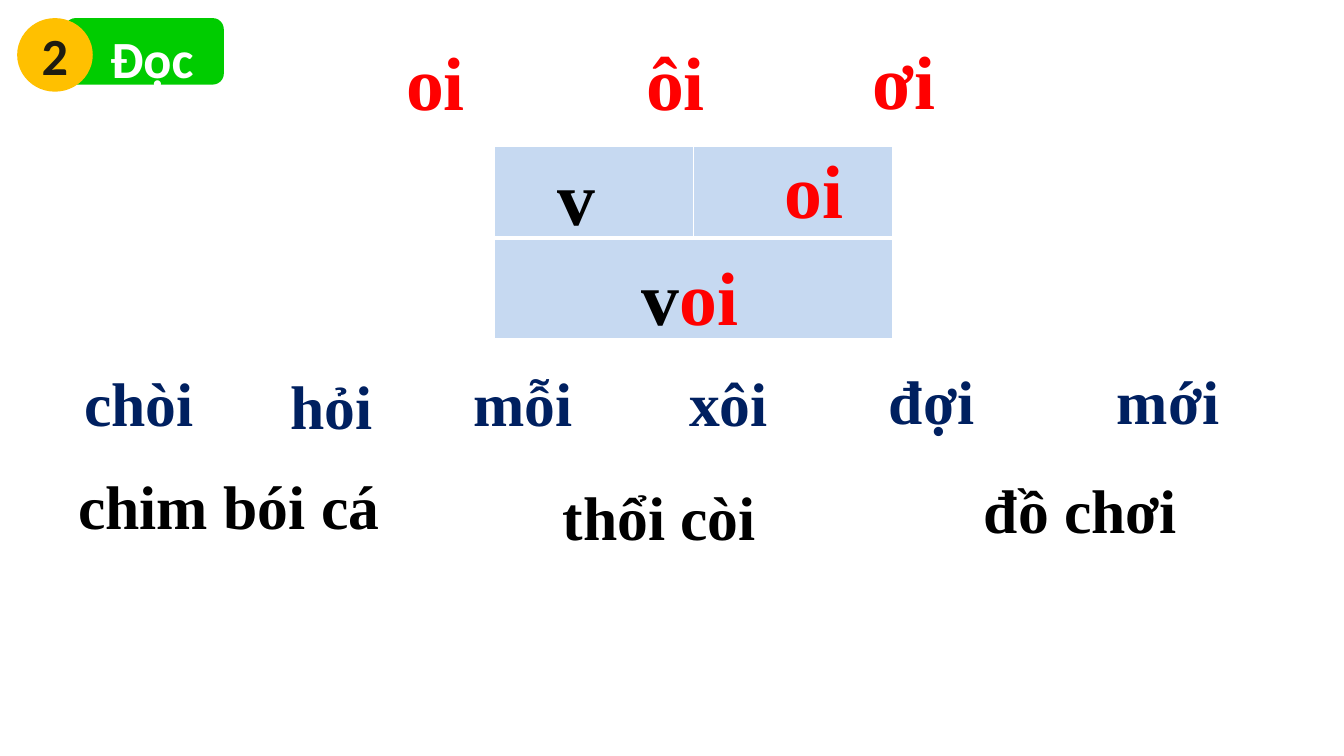
from dataclasses import dataclass

from lxml import etree
from pptx import Presentation
from pptx.dml.color import RGBColor
from pptx.enum import shapes, text
from pptx.oxml import ns
from pptx.util import Inches, Pt


@dataclass(frozen=True)
class Theme:
    serif: str = "Times New Roman"
    sans: str = "Calibri"
    black: str = "000000"
    white: str = "FFFFFF"
    red: str = "FF0000"
    navy: str = "002060"
    green: str = "00CC00"
    amber: str = "FFC000"
    dark: str = "1E1C11"
    cell: str = "C6D9F1"
    sound_size: float = 54
    word_size: float = 44
    badge_size: float = 37.3
    badge_space_size: float = 48


THEME = Theme()
CENTER, LEFT = text.PP_ALIGN.CENTER, text.PP_ALIGN.LEFT


def write_text(frame, *runs, font=THEME.serif, size=THEME.word_size,
               color=THEME.black, align=CENTER):
    """Write bold runs; each is a string or (string, overrides of the format)."""
    paragraph = frame.paragraphs[0]
    paragraph.alignment = align
    for item in runs:
        words, overrides = (item, {}) if isinstance(item, str) else item
        style = {"font": font, "size": size, "color": color} | overrides
        run = paragraph.add_run()
        run.text = words
        run.font.name = style["font"]
        run.font.size = Pt(style["size"])
        run.font.color.rgb = RGBColor.from_string(style["color"])
        run.font.bold = True


def add_label(slide, box, *runs, **style):
    label = slide.shapes.add_textbox(*map(Inches, box))
    frame = label.text_frame
    frame.word_wrap = True
    frame.auto_size = text.MSO_AUTO_SIZE.SHAPE_TO_FIT_TEXT
    write_text(frame, *runs, **style)


def add_badge_part(group, kind, box, fill, *runs, **style):
    shape = group.shapes.add_shape(kind, *map(Inches, box))
    shape.shadow.inherit = False
    shape.fill.solid()
    shape.fill.fore_color.rgb = RGBColor.from_string(fill)
    shape.line.fill.background()
    shape.text_frame.vertical_anchor = text.MSO_ANCHOR.MIDDLE
    write_text(shape.text_frame, *runs, font=THEME.sans,
               size=THEME.badge_size, **style)


def add_badge(slide):
    group = slide.shapes.add_group_shape()
    add_badge_part(group, shapes.MSO_SHAPE.ROUNDED_RECTANGLE,
                   (0.64, 0.18, 1.58, 0.66), THEME.green,
                   (" ", {"size": THEME.badge_space_size}), "Đọc",
                   color=THEME.white)
    add_badge_part(group, shapes.MSO_SHAPE.OVAL, (0.17, 0.18, 0.75, 0.73),
                   THEME.amber, "2", color=THEME.dark)


def style_cell(cell, bottom_width):
    properties = cell._tc.get_or_add_tcPr()
    for side in ("L", "R", "T", "B"):
        width = Pt(bottom_width if side == "B" else 1)
        line = etree.SubElement(properties, ns.qn(f"a:ln{side}"), w=str(width))
        fill = etree.SubElement(line, ns.qn("a:solidFill"))
        etree.SubElement(fill, ns.qn("a:srgbClr"), val=THEME.white)
    cell.fill.solid()
    cell.fill.fore_color.rgb = RGBColor.from_string(THEME.cell)


def add_blending_table(slide):
    """Two sounds above one merged cell for the blended word."""
    box = map(Inches, (4.9, 1.45, 3.95, 1.91))
    table = slide.shapes.add_table(2, 2, *box).table
    for row, height, bottom_width in zip(table.rows, (0.91, 1), (3, 1)):
        row.height = Inches(height)
        for cell in row.cells:
            style_cell(cell, bottom_width)
    table.cell(1, 0).merge(table.cell(1, 1))


def main():
    presentation = Presentation()
    presentation.slide_width = Inches(13.33)
    presentation.slide_height = Inches(7.5)
    slide = presentation.slides.add_slide(presentation.slide_layouts[6])

    add_blending_table(slide)
    add_badge(slide)

    red = {"color": THEME.red}
    sounds = [
        ((3.38, 0.3, 1.88), ["oi"], red),
        ((5.78, 0.3, 1.84), ["ôi"], red),
        ((7.89, 0.29, 2.16), ["ơi"], red),
        ((4.93, 1.44, 1.57), ["v"], {}),
        ((7.41, 1.37, 1.32), ["oi"], red),
        ((5.62, 2.43, 2.45), ["v", ("oi", red)], {}),
    ]
    for place, runs, style in sounds:
        add_label(slide, (*place, 1.01), *runs, size=THEME.sound_size, **style)

    words = [
        ((0.52, 3.57, 1.72), "chòi"),
        ((2.43, 3.6, 1.72), "hỏi"),
        ((4.33, 3.57, 1.72), "mỗi"),
        ((6.38, 3.57, 1.69), "xôi"),
        ((8.38, 3.55, 1.72), "đợi"),
        ((10.51, 3.55, 2.15), "mới"),
    ]
    for place, word in words:
        add_label(slide, (*place, 0.84), word, color=THEME.navy)

    phrases = [
        ((0.54, 4.59, 3.37), [(" ", {"font": THEME.sans}), "chim bói cá"], LEFT),
        ((5.3, 4.7, 2.48), ["thổi còi"], CENTER),
        ((9.66, 4.63, 2.5), ["đồ chơi"], LEFT),
    ]
    for place, runs, align in phrases:
        add_label(slide, (*place, 0.84), *runs, align=align)

    presentation.save("out.pptx")


if __name__ == "__main__":
    main()
